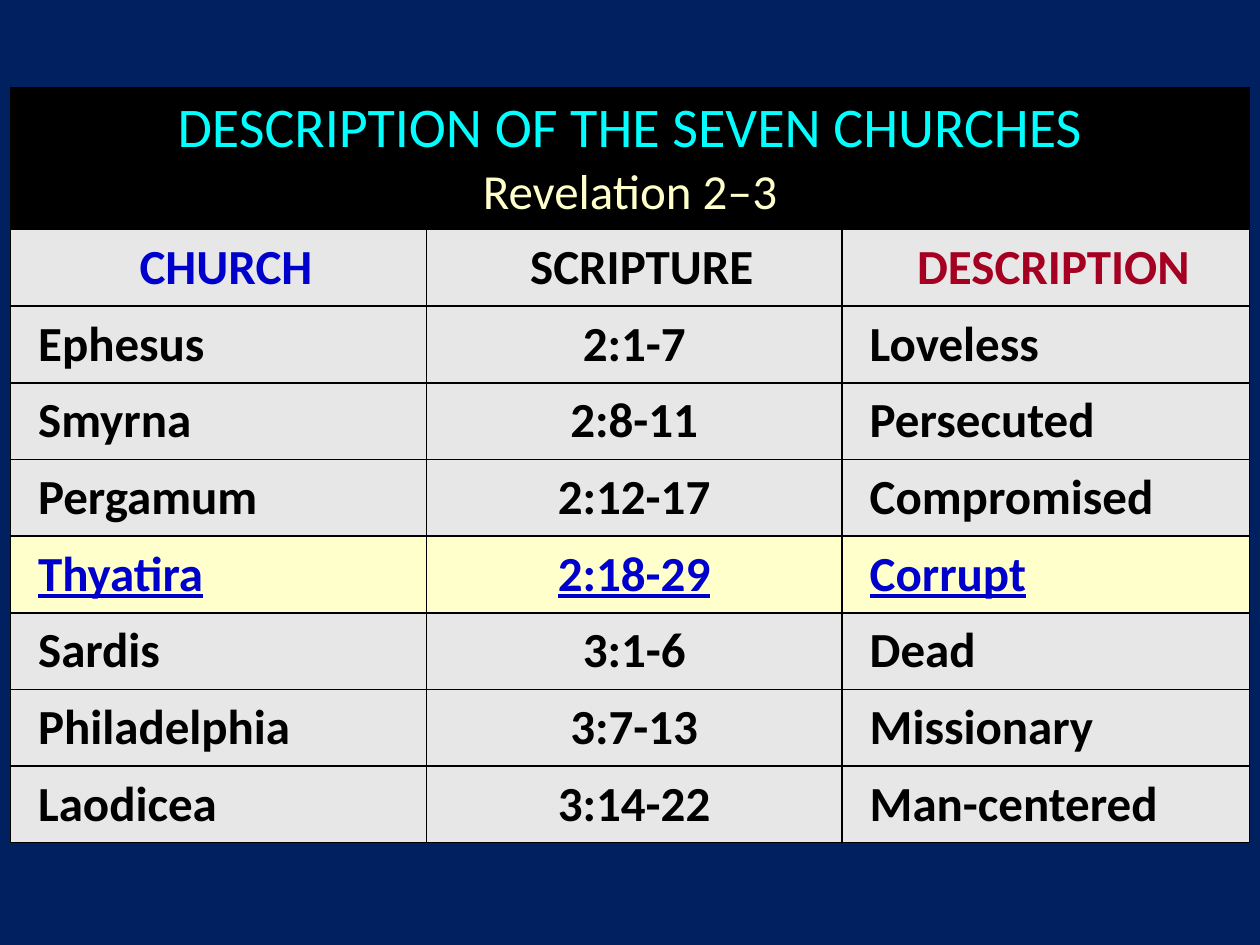
"""Build a slide with a table describing the seven churches of Revelation."""
from lxml.etree import SubElement
from pptx import Presentation
from pptx.dml.color import RGBColor
from pptx.enum.text import MSO_ANCHOR, PP_ALIGN
from pptx.oxml.ns import qn
from pptx.util import Pt

TITLE = [("DESCRIPTION OF THE SEVEN CHURCHES", 32, "00FFFF"),
         ("Revelation 2‒3", 28, "FFFFCC")]
HEADINGS = [("CHURCH", "0000CC"), ("SCRIPTURE", "000000"), ("DESCRIPTION", "A50021")]
CHURCHES = [
    ("Ephesus", "2:1-7", "Loveless"),
    ("Smyrna", "2:8-11", "Persecuted"),
    ("Pergamum", "2:12-17", "Compromised"),
    ("Thyatira", "2:18-29", "Corrupt"),
    ("Sardis", "3:1-6", "Dead"),
    ("Philadelphia", "3:7-13", "Missionary"),
    ("Laodicea", "3:14-22", "Man-centered"),
]
HIGHLIGHTED = "Thyatira"
COLUMN_WIDTHS = [237.6, 237.6, 232.8]
TITLE_HEIGHT, ROW_HEIGHT = 81.2, 43.8
LEFT, TOP = 6, 50
MARGIN, INDENT = 7.2, 8.6


def color(value):
    return RGBColor.from_string(value)


def format_run(run, size, text_color, bold=False, underline=False):
    font = run.font
    font.name, font.size = "Calibri", Pt(size)
    font.bold, font.underline = bold, underline
    font.color.rgb = color(text_color)


def format_cell(cell, fill, indent=0):
    properties = cell._tc.get_or_add_tcPr()
    for side in ("a:lnL", "a:lnR", "a:lnT", "a:lnB"):
        line = SubElement(properties, qn(side), w=str(Pt(1)))
        SubElement(SubElement(line, qn("a:solidFill")), qn("a:srgbClr"), val="000000")
    cell.fill.solid()
    cell.fill.fore_color.rgb = color(fill)
    cell.vertical_anchor = MSO_ANCHOR.MIDDLE
    cell.margin_left, cell.margin_right = Pt(MARGIN + indent), Pt(MARGIN)
    cell.margin_top = cell.margin_bottom = Pt(MARGIN / 2)


def fill_cell(cell, text, text_color, fill, centered, indent, underline=False):
    format_cell(cell, fill, indent)
    cell.text_frame.text = text
    paragraph = cell.text_frame.paragraphs[0]
    paragraph.alignment = PP_ALIGN.CENTER if centered else PP_ALIGN.LEFT
    format_run(paragraph.runs[0], 28, text_color, True, underline)


def fill_title(table):
    for cell in table.rows[0].cells:
        format_cell(cell, "000000")
    table.cell(0, 0).merge(table.cell(0, 2))
    paragraph = table.cell(0, 0).text_frame.paragraphs[0]
    paragraph.alignment = PP_ALIGN.CENTER
    for index, (text, size, text_color) in enumerate(TITLE):
        if index:
            paragraph.add_line_break()
        run = paragraph.add_run()
        run.text = text
        format_run(run, size, text_color)


def main():
    presentation = Presentation()
    presentation.slide_width, presentation.slide_height = Pt(720), Pt(540)
    slide = presentation.slides.add_slide(presentation.slide_layouts[6])
    slide.background.fill.solid()
    slide.background.fill.fore_color.rgb = color("002060")

    heights = [TITLE_HEIGHT] + [ROW_HEIGHT] * (len(CHURCHES) + 1)
    table = slide.shapes.add_table(
        len(heights), len(COLUMN_WIDTHS), Pt(LEFT), Pt(TOP),
        Pt(sum(COLUMN_WIDTHS)), Pt(sum(heights))).table
    for column, width in zip(table.columns, COLUMN_WIDTHS):
        column.width = Pt(width)
    for row, height in zip(table.rows, heights):
        row.height = Pt(height)

    fill_title(table)
    for column, (heading, text_color) in enumerate(HEADINGS):
        fill_cell(table.cell(1, column), heading, text_color, "E7E7E7", True, INDENT)
    for row, church in enumerate(CHURCHES, start=2):
        highlighted = church[0] == HIGHLIGHTED
        text_color, fill = ("0000CC", "FFFFCC") if highlighted else ("000000", "E7E7E7")
        for column, text in enumerate(church):
            centered = column == 1
            fill_cell(table.cell(row, column), text, text_color, fill, centered,
                      0 if centered else INDENT, highlighted)
    presentation.save("out.pptx")


if __name__ == "__main__":
    main()
